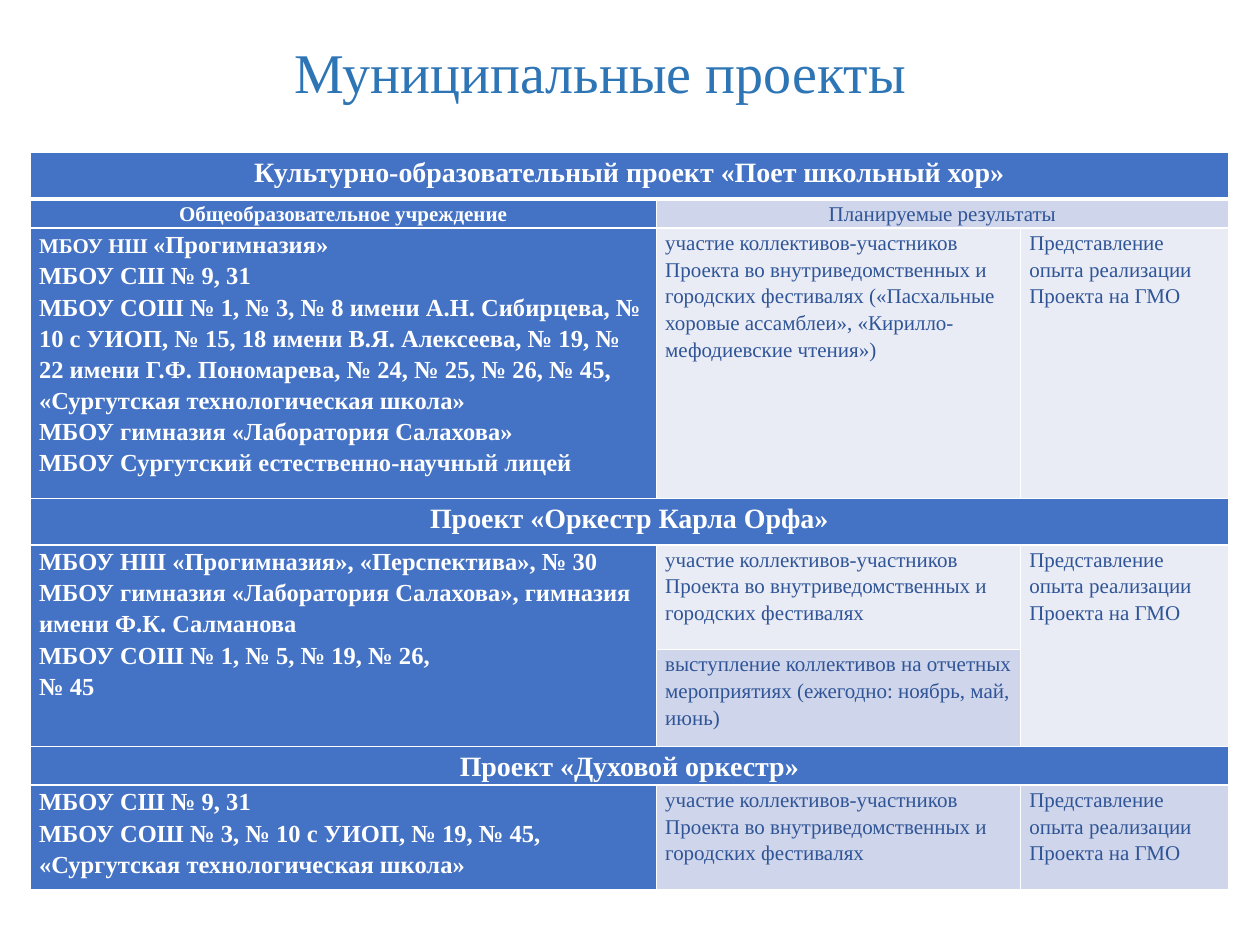
import pptx
import pptx.dml.color
import pptx.enum.text
import pptx.oxml
import pptx.oxml.ns
import pptx.util

COLORS = {"title": "2E75B6", "head": "4472C4", "dark": "CFD5EA",
          "light": "E9EBF5", "white": "FFFFFF", "body": "2F5597"}
FONT = "Times New Roman"
GRID = (10, 7.5)
TITLE_BOX = (1.4, 0.26, 6.73, 0.68)
TABLE_BOX = (0.24, 1.21, 9.51, 5.51)
COLUMNS = (4.97, 2.89, 1.65)
ROWS = (0.37, 0.21, 1.92, 0.37, 0.83, 0.77, 0.21, 0.83)
CENTER = pptx.enum.text.PP_ALIGN.CENTER
LEFT = pptx.enum.text.PP_ALIGN.LEFT
STYLES = {
    "project": {"size": 16, "bold": True, "color": "white", "align": CENTER},
    "heading": {"size": 12, "bold": True, "color": "white", "align": CENTER},
    "subheading": {"size": 12, "bold": False, "color": "body", "align": CENTER},
    "schools": {"size": 14, "bold": True, "color": "white", "align": LEFT},
    "result": {"size": 12, "bold": False, "color": "body", "align": LEFT},
    "title": {"size": 32, "bold": False, "color": "title", "align": CENTER},
}
FESTIVALS = "участие коллективов-участников Проекта во внутриведомственных и городских фестивалях"
EXPERIENCE = "Представление опыта реализации Проекта на ГМО"
CELLS = [
    (0, 0, 1, 3, "project", "head", ["Культурно-образовательный проект «Поет школьный хор»"]),
    (1, 0, 1, 1, "heading", "head", ["Общеобразовательное учреждение"]),
    (1, 1, 1, 2, "subheading", "dark", ["Планируемые результаты"]),
    (2, 0, 1, 1, "schools", "head", [
        [("МБОУ НШ ", 12), ("«Прогимназия»", 14)],
        "МБОУ СШ № 9, 31",
        "МБОУ СОШ № 1, № 3, № 8 имени А.Н. Сибирцева, № 10 с УИОП, № 15, 18 имени "
        "В.Я. Алексеева, № 19, № 22 имени Г.Ф. Пономарева, № 24, № 25, № 26, № 45, "
        "«Сургутская технологическая школа»",
        "МБОУ гимназия «Лаборатория Салахова»",
        "МБОУ Сургутский естественно-научный лицей"]),
    (2, 1, 1, 1, "result", "light", [
        FESTIVALS + " («Пасхальные хоровые ассамблеи», «Кирилло-мефодиевские чтения»)"]),
    (2, 2, 1, 1, "result", "light", [EXPERIENCE]),
    (3, 0, 1, 3, "project", "head", ["Проект «Оркестр Карла Орфа»"]),
    (4, 0, 2, 1, "schools", "head", [
        "МБОУ НШ «Прогимназия», «Перспектива», № 30",
        "МБОУ гимназия «Лаборатория Салахова», гимназия имени Ф.К. Салманова",
        "МБОУ СОШ № 1, № 5, № 19, № 26,",
        "№ 45"]),
    (4, 1, 1, 1, "result", "light", [FESTIVALS]),
    (4, 2, 2, 1, "result", "light", [EXPERIENCE]),
    (5, 1, 1, 1, "result", "dark", [
        "выступление коллективов на отчетных мероприятиях (ежегодно: ноябрь, май, июнь)"]),
    (6, 0, 1, 3, "project", "head", ["Проект «Духовой оркестр»"]),
    (7, 0, 1, 1, "schools", "head", [
        "МБОУ СШ № 9, 31",
        "МБОУ СОШ № 3, № 10 с УИОП, № 19, № 45, «Сургутская технологическая школа»"]),
    (7, 1, 1, 1, "result", "dark", [FESTIVALS]),
    (7, 2, 1, 1, "result", "dark", [EXPERIENCE]),
]


def rgb(name):
    """Return the palette colour with the given name."""
    return pptx.dml.color.RGBColor.from_string(COLORS[name])


def set_attributes(target, values):
    """Set every named attribute on the target."""
    for name, value in values.items():
        setattr(target, name, value)


def place(presentation, box):
    """Turn a box in grid units into slide lengths."""
    units = (presentation.slide_width / GRID[0], presentation.slide_height / GRID[1])
    return [int(value * units[index % 2]) for index, value in enumerate(box)]


def write_text(frame, paragraphs, style_name, line_spacing):
    """Fill a text frame with paragraphs of one style."""
    style = STYLES[style_name]
    for index, content in enumerate(paragraphs):
        paragraph = frame.add_paragraph() if index else frame.paragraphs[0]
        set_attributes(paragraph, {"alignment": style["align"], "line_spacing": line_spacing})
        parts = [(content, style["size"])] if isinstance(content, str) else content
        for text, size in parts:
            run = paragraph.add_run()
            run.text = text
            set_attributes(run.font, {"name": FONT, "size": pptx.util.Pt(size),
                                      "bold": style["bold"]})
            run.font.color.rgb = rgb(style["color"])


def add_borders(cell, widths):
    """Draw white borders, given a width in points for each side."""
    properties = cell._tc.get_or_add_tcPr()
    for side, width in widths.items():
        properties.append(pptx.oxml.parse_xml(
            f'<a:ln{side} {pptx.oxml.ns.nsdecls("a")} w="{pptx.util.Pt(width)}">'
            f'<a:solidFill><a:srgbClr val="{COLORS["white"]}"/></a:solidFill></a:ln{side}>'))


def add_title(slide, box):
    """Place the slide title in the box."""
    frame = slide.shapes.add_textbox(*box).text_frame
    set_attributes(frame, {"word_wrap": True,
                           "vertical_anchor": pptx.enum.text.MSO_ANCHOR.MIDDLE})
    write_text(frame, ["Муниципальные проекты"], "title", 0.9)


def add_projects(slide, box):
    """Place the table of projects in the box."""
    table = slide.shapes.add_table(len(ROWS), len(COLUMNS), *box).table
    set_attributes(table, {"first_row": False, "horz_banding": False})
    for column, weight in zip(table.columns, COLUMNS):
        column.width = int(box[2] * weight / sum(COLUMNS))
    for row, weight in zip(table.rows, ROWS):
        row.height = int(box[3] * weight / sum(ROWS))
    margin = pptx.util.Inches(0.07)
    for top, left, height, width, style, fill, paragraphs in CELLS:
        for row in range(top, top + height):
            for column in range(left, left + width):
                cell = table.cell(row, column)
                add_borders(cell, {"L": 1, "R": 1, "T": 3 if row == 1 else 1,
                                   "B": 3 if row == 0 else 1})
                cell.fill.solid()
                cell.fill.fore_color.rgb = rgb(fill)
                set_attributes(cell, {"margin_left": margin, "margin_right": margin,
                                      "margin_top": 0, "margin_bottom": 0})
        origin = table.cell(top, left)
        if height * width > 1:
            origin.merge(table.cell(top + height - 1, left + width - 1))
        write_text(origin.text_frame, paragraphs, style, 1.15)


def main():
    """Build and save the slide."""
    presentation = pptx.Presentation()
    set_attributes(presentation, {"slide_width": pptx.util.Inches(GRID[0]),
                                  "slide_height": pptx.util.Inches(GRID[1])})
    slide = presentation.slides.add_slide(presentation.slide_layouts[6])
    slide.background.fill.solid()
    slide.background.fill.fore_color.rgb = rgb("white")
    add_title(slide, place(presentation, TITLE_BOX))
    add_projects(slide, place(presentation, TABLE_BOX))
    presentation.save("out.pptx")


if __name__ == "__main__":
    main()
